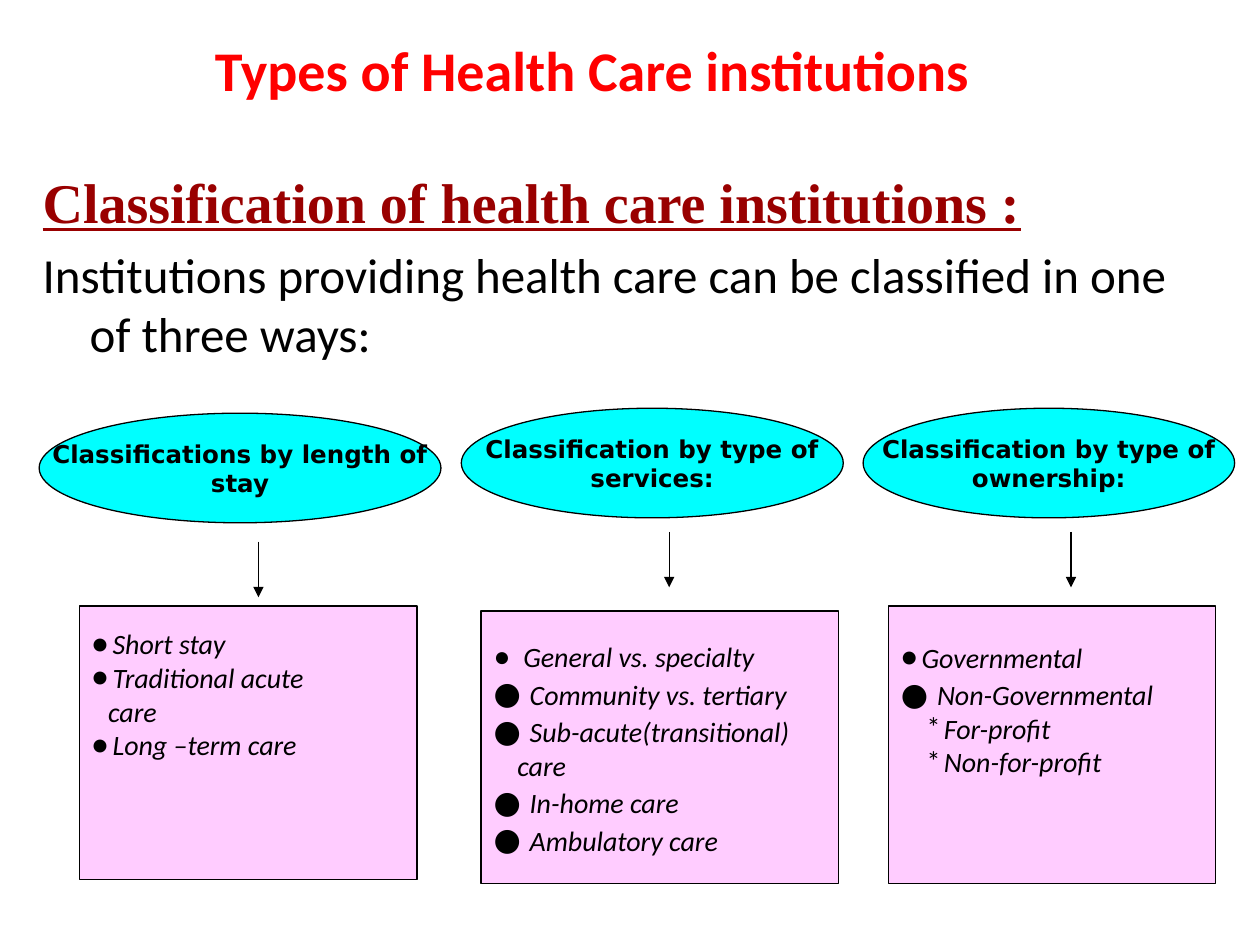
from lxml.etree import SubElement
from pptx import Presentation
from pptx.dml.color import RGBColor
from pptx.enum.shapes import MSO_CONNECTOR, MSO_SHAPE
from pptx.enum.text import MSO_ANCHOR, PP_ALIGN
from pptx.oxml.ns import qn
from pptx.util import Cm, Pt

# Bullet styles: character, font, size in percent, left margin and hang in cm
BULLETS = {
    "dot": ("●", "Calibri", 100, 0.42, 0.42),
    "spaced dot": ("●", "Times New Roman", 100, 0.6, 0.6),
    "big dot": ("●", "DejaVu Sans", 112, 0.73, 0.73),
    "star": ("*", "Calibri", 100, 0.87, 0.35),
    "short wrap": (None, None, None, 0.33, 0),
    "long wrap": (None, None, None, 0.48, 0),
}

# Each column: ellipse, arrow start, box and its top inset, heading, items
COLUMNS = [
    ((0.79, 8.33, 8.1, 2.21), (5.21, 10.92), (1.6, 12.22, 6.81, 5.51), 0.42,
     ["Classifications by length of", "stay"],
     [("dot", "Short stay"), ("dot", "Traditional acute"),
      ("short wrap", "care"), ("dot", "Long –term care")]),
    ((9.3, 8.23, 7.7, 2.21), (13.49, 10.72), (9.7, 12.32, 7.21, 5.49), 0.58,
     ["Classification by type of", "services:"],
     [("spaced dot", "General vs. specialty"),
      ("big dot", "Community vs. tertiary"),
      ("big dot", "Sub-acute(transitional)"), ("long wrap", "care"),
      ("big dot", "In-home care"), ("big dot", "Ambulatory care")]),
    ((17.4, 8.23, 7.49, 2.21), (21.59, 10.72), (17.91, 12.22, 6.6, 5.59), 0.69,
     ["Classification by type of", "ownership:"],
     [("dot", "Governmental"), ("big dot", "Non-Governmental"),
      ("star", "For-profit"), ("star", "Non-for-profit")]),
]
ARROW_LENGTH = 1.12


def rgb(value):
    return RGBColor.from_string(value)


def set_indent(p, left, hang):
    pPr = p._p.get_or_add_pPr()
    pPr.set("marL", str(Cm(left)))
    pPr.set("indent", str(-Cm(hang)))
    return pPr


def set_bullet(p, style):
    char, font, percent, left, hang = BULLETS[style]
    pPr = set_indent(p, left, hang)
    if char is None:
        SubElement(pPr, qn("a:buNone"))
        return
    SubElement(pPr, qn("a:buSzPct"), val=str(percent * 1000))
    SubElement(pPr, qn("a:buFont"), typeface=font)
    SubElement(pPr, qn("a:buChar"), char=char)


class SlideBuilder:
    """Holds the style and the slide being filled."""

    black = "000000"
    ellipse_fill = "00FFFF"
    box_fill = "FFCCFF"
    line_width = Pt(0.75)

    def __init__(self, slide):
        self.s = slide

    def font(self, p, name, size, color=black, **flags):
        for r in p.runs:
            r.font.name, r.font.size = name, Pt(size)
            r.font.color.rgb = rgb(color)
            for flag, value in flags.items():
                setattr(r.font, flag, value)

    def textbox(self, x, y, w, h, text):
        tf = self.s.shapes.add_textbox(Cm(x), Cm(y), Cm(w), Cm(h)).text_frame
        tf.word_wrap = True
        tf.text = text
        return tf

    def title(self, text):
        tf = self.textbox(1.27, 0.43, 21.34, 1.91, text)
        tf.vertical_anchor = MSO_ANCHOR.MIDDLE
        p = tf.paragraphs[0]
        p.alignment = PP_ALIGN.CENTER
        self.font(p, "Calibri", 32, "FF0000", bold=True)

    def body(self, heading, text):
        tf = self.textbox(0.61, 3.02, 23.52, 4.5, f"{heading}\n{text}")
        tf.margin_top = Cm(0.35)
        head, para = tf.paragraphs
        for p in (head, para):
            set_indent(p, 0.95, 0.95)
        para.space_before = Pt(5.6)
        self.font(head, "Times New Roman", 32, "990000", bold=True, underline=True)
        self.font(para, "Calibri", 28)

    def shape(self, kind, place, fill, lines):
        sp = self.s.shapes.add_shape(kind, *map(Cm, place))
        sp.shadow.inherit = False
        sp.fill.solid()
        sp.fill.fore_color.rgb = rgb(fill)
        sp.line.color.rgb = rgb(self.black)
        sp.line.width = self.line_width
        tf = sp.text_frame
        tf.text = "\n".join(lines)
        return tf

    def ellipse(self, place, lines):
        tf = self.shape(MSO_SHAPE.OVAL, place, self.ellipse_fill, lines)
        tf.word_wrap = False
        tf.vertical_anchor = MSO_ANCHOR.MIDDLE
        for p in tf.paragraphs:
            p.alignment = PP_ALIGN.CENTER
            self.font(p, "DejaVu Sans", 14, bold=True)

    def box(self, place, top_inset, items):
        tf = self.shape(MSO_SHAPE.RECTANGLE, place, self.box_fill,
                        [text for _, text in items])
        tf.word_wrap = True
        tf.vertical_anchor = MSO_ANCHOR.TOP
        tf.margin_top = Cm(top_inset)
        for p, (style, _) in zip(tf.paragraphs, items):
            p.alignment = PP_ALIGN.LEFT
            set_bullet(p, style)
            if style == "big dot":
                p.space_before = Pt(2.2)
            self.font(p, "Calibri", 16, italic=True)

    def arrow(self, x, y):
        line = self.s.shapes.add_connector(
            MSO_CONNECTOR.STRAIGHT, Cm(x), Cm(y), Cm(x), Cm(y + ARROW_LENGTH))
        line.line.color.rgb = rgb(self.black)
        line.line.width = self.line_width
        SubElement(line.line._get_or_add_ln(), qn("a:tailEnd"), type="triangle")
        SubElement(line._element.spPr, qn("a:effectLst"))


def main():
    prs = Presentation()
    prs.slide_width, prs.slide_height = Cm(25.4), Cm(19.05)
    builder = SlideBuilder(prs.slides.add_slide(prs.slide_layouts[6]))
    builder.title("Types of Health Care institutions")
    builder.body(
        "Classification of health care institutions :",
        "Institutions providing health care can be classified in one of three ways:")
    for ellipse, arrow, box, top_inset, heading, items in COLUMNS:
        builder.ellipse(ellipse, heading)
        builder.box(box, top_inset, items)
        builder.arrow(*arrow)
    prs.save("out.pptx")


if __name__ == "__main__":
    main()
